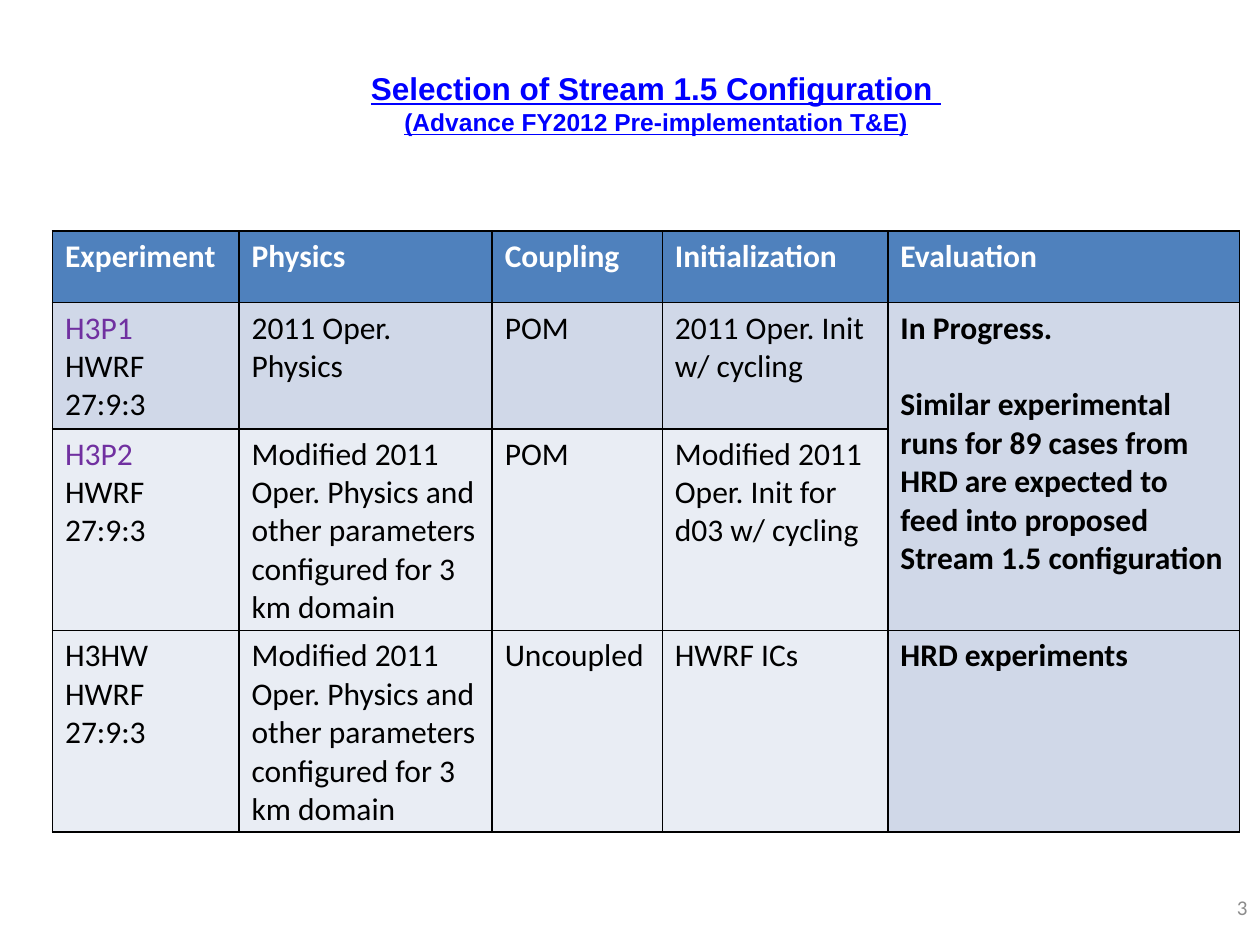
from dataclasses import dataclass

import pptx
import pptx.dml.color
import pptx.enum.text
import pptx.oxml
import pptx.oxml.ns
import pptx.util
from pptx.dml.color import RGBColor
from pptx.util import Pt

BLACK = RGBColor(0x00, 0x00, 0x00)
WHITE = RGBColor(0xFF, 0xFF, 0xFF)
BLUE = RGBColor(0x00, 0x00, 0xFF)
PURPLE = RGBColor(0x70, 0x30, 0xA0)
GREY = RGBColor(0x8C, 0x8C, 0x8C)
HEADER_FILL = RGBColor(0x4F, 0x81, 0xBD)
BAND_DARK = RGBColor(0xD0, 0xD8, 0xE8)
BAND_LIGHT = RGBColor(0xE9, 0xED, 0xF4)

COL_WIDTHS = (106.6, 144.7, 97.2, 128.9, 200.9)
ROW_HEIGHTS = (41, 72, 115.2, 115.2)
HEADERS = ("Experiment", "Physics", "Coupling", "Initialization", "Evaluation")
GRID = "HWRF 27:9:3"
MODIFIED_PHYSICS = ("Modified 2011 Oper. Physics and other parameters "
                    "configured for 3 km domain")


@dataclass
class Experiment:
    name: str
    name_color: RGBColor
    physics: str
    coupling: str
    initialization: str
    evaluation: str
    fill: RGBColor


EXPERIMENTS = (
    Experiment("H3P1", PURPLE, "2011 Oper. Physics", "POM",
               "2011 Oper. Init w/ cycling",
               "In Progress.\nSimilar experimental runs for 89 cases from HRD "
               "are expected to feed into proposed Stream 1.5 configuration",
               BAND_DARK),
    Experiment("H3P2", PURPLE, MODIFIED_PHYSICS, "POM",
               "Modified 2011 Oper. Init for d03 w/ cycling", "", BAND_LIGHT),
    Experiment("H3HW", BLACK, MODIFIED_PHYSICS, "Uncoupled", "HWRF ICs",
               "HRD experiments", BAND_LIGHT),
)


def format_paragraph(p, name: str, size: float, color: RGBColor,
                     bold: bool = False) -> None:
    for r in p.runs:
        r.font.name = name
        r.font.size = Pt(size)
        r.font.bold = bold
        r.font.color.rgb = color


def set_borders(cell) -> None:
    tc_pr = cell._tc.get_or_add_tcPr()
    ns = pptx.oxml.ns.nsdecls("a")
    for side in ("lnL", "lnR", "lnT", "lnB"):
        tc_pr.append(pptx.oxml.parse_xml(
            f'<a:{side} {ns} w="{Pt(1)}"><a:solidFill>'
            f'<a:srgbClr val="{BLACK}"/></a:solidFill></a:{side}>'))


def fill_cell(cell, text: str, fill: RGBColor, color: RGBColor = BLACK,
              bold: bool = False) -> None:
    set_borders(cell)
    cell.fill.solid()
    cell.fill.fore_color.rgb = fill
    cell.text_frame.text = text
    for p in cell.text_frame.paragraphs:
        format_paragraph(p, "Calibri", 18, color, bold)


def add_title(slide) -> None:
    sp = slide.shapes.title
    sp.left, sp.top, sp.width, sp.height = Pt(84), Pt(36), Pt(582), Pt(45.4)
    tf = sp.text_frame
    tf.text = ("Selection of Stream 1.5 Configuration \n"
               "(Advance FY2012 Pre-implementation T&E)")
    tf.word_wrap = True
    tf.auto_size = pptx.enum.text.MSO_AUTO_SIZE.SHAPE_TO_FIT_TEXT
    tf.vertical_anchor = pptx.enum.text.MSO_ANCHOR.TOP
    for p, size in zip(tf.paragraphs, (18, 14)):
        p.alignment = pptx.enum.text.PP_ALIGN.CENTER
        format_paragraph(p, "Arial", size, BLUE, bold=True)
        for r in p.runs:
            r.font.underline = True


def add_experiment_table(slide) -> None:
    table = slide.shapes.add_table(
        len(ROW_HEIGHTS), len(COL_WIDTHS), Pt(30), Pt(132),
        Pt(sum(COL_WIDTHS)), Pt(sum(ROW_HEIGHTS))).table
    for column, width in zip(table.columns, COL_WIDTHS):
        column.width = Pt(width)
    for row, height in zip(table.rows, ROW_HEIGHTS):
        row.height = Pt(height)

    for col, header in enumerate(HEADERS):
        fill_cell(table.cell(0, col), header, HEADER_FILL, WHITE, bold=True)
    for row, e in enumerate(EXPERIMENTS, start=1):
        texts = (f"{e.name}\n{GRID}", e.physics, e.coupling, e.initialization)
        for col, text in enumerate(texts):
            fill_cell(table.cell(row, col), text, e.fill)
        name = table.cell(row, 0).text_frame.paragraphs[0]
        format_paragraph(name, "Calibri", 18, e.name_color)
        fill_cell(table.cell(row, 4), e.evaluation, BAND_DARK, bold=True)

    shared = table.cell(1, 4)
    shared.merge(table.cell(2, 4))
    shared.text_frame.paragraphs[1].space_before = Pt(22)


def add_slide_number(slide) -> None:
    sp = slide.shapes.add_textbox(Pt(552), Pt(504), Pt(168), Pt(28.8))
    tf = sp.text_frame
    tf.word_wrap = True
    tf.vertical_anchor = pptx.enum.text.MSO_ANCHOR.MIDDLE
    tf.text = "3"
    p = tf.paragraphs[0]
    p.alignment = pptx.enum.text.PP_ALIGN.RIGHT
    format_paragraph(p, "Calibri", 12, GREY)


def main() -> None:
    prs = pptx.Presentation()
    prs.slide_width, prs.slide_height = Pt(720), Pt(540)
    slide = prs.slides.add_slide(prs.slide_layouts.get_by_name("Title Only"))
    add_title(slide)
    add_experiment_table(slide)
    add_slide_number(slide)
    prs.save("out.pptx")


if __name__ == "__main__":
    main()
